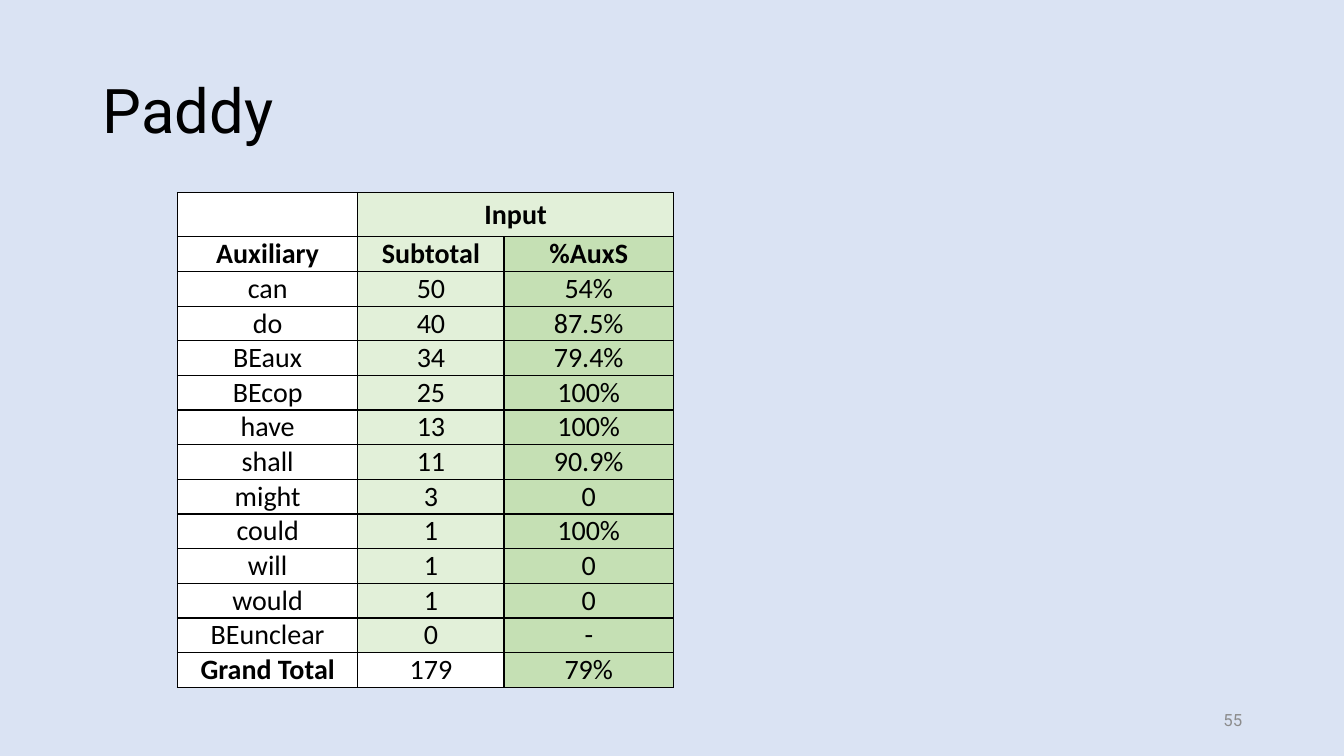
from lxml.etree import SubElement
from pptx import Presentation
from pptx.dml.color import RGBColor
from pptx.enum.text import MSO_ANCHOR, PP_ALIGN
from pptx.oxml.ns import qn
from pptx.util import Inches, Pt

WHITE, LIGHT, GREEN = "FFFFFF", "E2F0D9", "C5E0B4"
BLACK, GREY, BACKGROUND = "000000", "8C8C8C", "DAE3F3"
COLUMN_WIDTHS = (1.79, 1.45, 1.68, 1.55, 1.15, 1.59)
ROWS = [
    ("", "Input", ""),
    ("Auxiliary", "Subtotal", "%AuxS"),
    ("can", "50", "54%"),
    ("do", "40", "87.5%"),
    ("BEaux", "34", "79.4%"),
    ("BEcop", "25", "100%"),
    ("have", "13", "100%"),
    ("shall", "11", "90.9%"),
    ("might", "3", "0"),
    ("could", "1", "100%"),
    ("will", "1", "0"),
    ("would", "1", "0"),
    ("BEunclear", "0", "-"),
    ("Grand Total", "179", "79%"),
]


def color(value):
    return RGBColor.from_string(value)


class SlideBuilder:
    heading_font = "Roboto"
    table_font = "Calibri"

    def __init__(self, slide, background):
        self.s = slide
        fill = slide.background.fill
        fill.solid()
        fill.fore_color.rgb = color(background)

    def style(self, p, font, size, ink, align, bold=False):
        p.alignment = align
        p.font.name = font
        p.font.size = Pt(size)
        p.font.bold = bold
        p.font.color.rgb = color(ink)

    def text(self, text, left, top, width, height, size, ink, align=PP_ALIGN.LEFT):
        sp = self.s.shapes.add_textbox(
            Inches(left), Inches(top), Inches(width), Inches(height))
        tf = sp.text_frame
        tf.word_wrap = True
        tf.vertical_anchor = MSO_ANCHOR.MIDDLE
        p = tf.paragraphs[0]
        p.text = text
        p.line_spacing = 0.9
        self.style(p, self.heading_font, size, ink, align)

    def borders(self, cell, black_sides):
        tcPr = cell._tc.get_or_add_tcPr()
        for side in "LRTB":
            ln = SubElement(tcPr, qn(f"a:ln{side}"), w=str(Pt(1)))
            if side in black_sides:
                fill = SubElement(ln, qn("a:solidFill"))
                SubElement(fill, qn("a:srgbClr"), val=BLACK)
            else:
                SubElement(ln, qn("a:noFill"))

    def cell(self, cell, text, fill, black_sides, bold, inset):
        self.borders(cell, black_sides)
        if fill:
            cell.fill.solid()
            cell.fill.fore_color.rgb = color(fill)
        else:
            cell.fill.background()
        cell.vertical_anchor = MSO_ANCHOR.MIDDLE
        cell.margin_left = cell.margin_right = Inches(inset)
        cell.margin_top = cell.margin_bottom = Inches(inset)
        p = cell.text_frame.paragraphs[0]
        p.text = text
        self.style(p, self.table_font, 20, BLACK, PP_ALIGN.CENTER, bold)

    def table(self, rows, left, top, widths, height, header_height):
        last = len(rows) - 1
        row_height = (height - header_height) / last
        table = self.s.shapes.add_table(
            len(rows), len(widths), Inches(left), Inches(top),
            Inches(sum(widths)), Inches(height)).table
        table.first_row = table.horz_banding = False
        for column, width in zip(table.columns, widths):
            column.width = Inches(width)
        for i, row in enumerate(rows):
            table.rows[i].height = Inches(row_height if i else header_height)
            fills = (WHITE, WHITE if i == last else LIGHT, GREEN if i else LIGHT)
            for j in range(len(widths)):
                used = j < len(row)
                sides = "LRTB" if used else "L" if j == len(row) else ""
                bold = i < 2 or (i == last and j == 0)
                self.cell(table.cell(i, j), row[j] if used else "",
                          fills[j] if used else None, sides, bold, 0 if i else 0.05)
        table.cell(0, 1).merge(table.cell(0, 2))
        table.cell(0, 3).merge(table.cell(0, 5))


def main():
    prs = Presentation()
    prs.slide_width, prs.slide_height = Inches(13.33), Inches(7.5)
    slide = SlideBuilder(prs.slides.add_slide(prs.slide_layouts[6]), BACKGROUND)
    slide.text("Paddy", 0.92, 0.4, 11.5, 1.45, 44, BLACK)
    slide.text("55", 9.42, 6.95, 3, 0.4, 12, GREY, PP_ALIGN.RIGHT)
    slide.table(ROWS, 1.76, 1.91, COLUMN_WIDTHS, 4.91, 0.44)
    prs.save("out.pptx")


if __name__ == "__main__":
    main()
